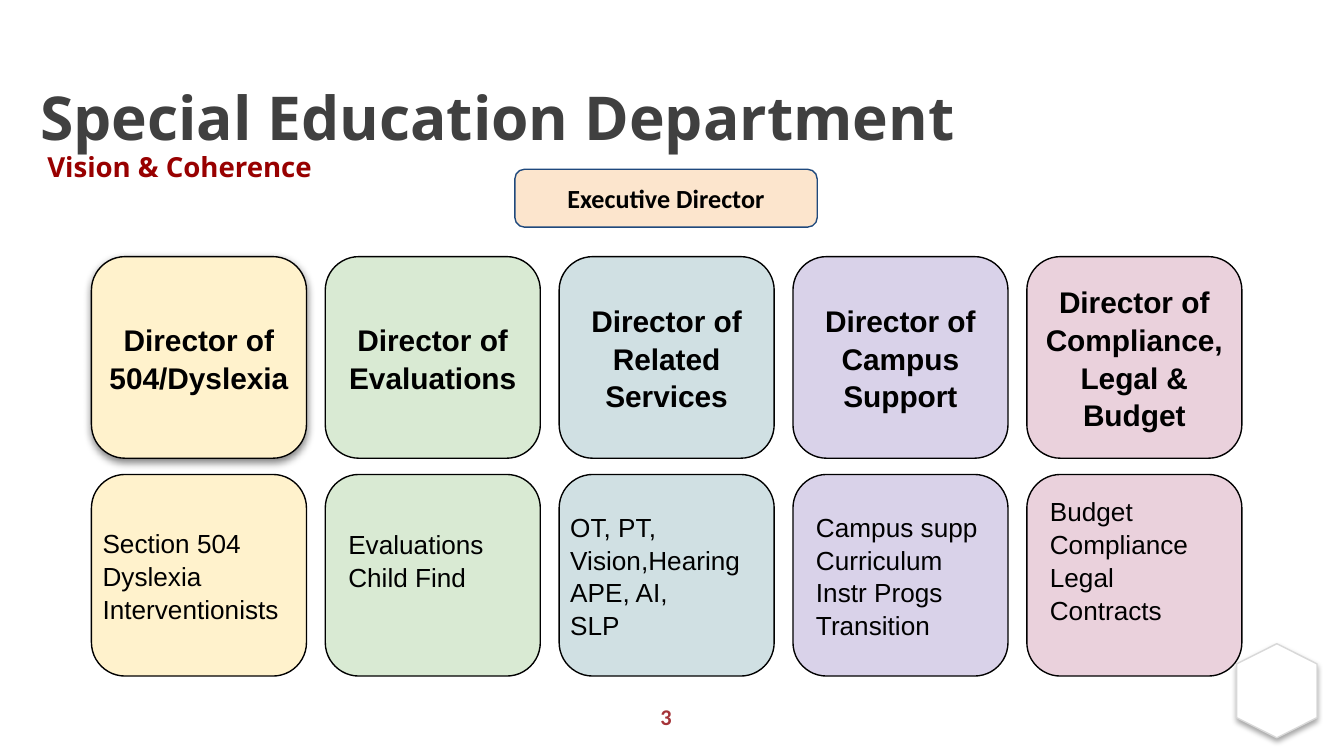
"""Build the Special Education Department organisation slide."""
from lxml import etree
from pptx import Presentation
from pptx.dml.color import RGBColor
from pptx.enum.shapes import MSO_SHAPE
from pptx.enum.text import MSO_ANCHOR, PP_ALIGN
from pptx.oxml.ns import qn
from pptx.util import Pt

BOX, HEXAGON = MSO_SHAPE.FLOWCHART_ALTERNATE_PROCESS, MSO_SHAPE.HEXAGON
MIDDLE = MSO_ANCHOR.MIDDLE
LEFT, CENTER = PP_ALIGN.LEFT, PP_ALIGN.CENTER

TITLE = "Special Education Department"
SUBTITLE = " Vision & Coherence"
HEAD = "Executive Director"
PAGE = "3"
NARROW, WIDE, RAISED = 0.72, 7.2, 24
DEPARTMENTS = [
    {"fill": "FFF2CC", "director": ["Director of 504/Dyslexia"], "director_side": NARROW,
     "areas": ["Section 504", "Dyslexia", "Interventionists"],
     "area_side": NARROW, "area_bottom": WIDE},
    {"fill": "D9EAD3", "director": ["Director of", "Evaluations"], "director_side": WIDE,
     "areas": ["Evaluations", "Child Find"],
     "area_side": WIDE, "area_bottom": RAISED},
    {"fill": "D0E0E3", "director": ["Director of", "Related Services"], "director_side": WIDE,
     "areas": ["OT, PT, Vision,Hearing", "APE, AI,", "SLP"],
     "area_side": NARROW, "area_bottom": WIDE},
    {"fill": "D9D2E9", "director": ["Director of", "Campus Support"], "director_side": WIDE,
     "areas": ["Campus supp", "Curriculum", "Instr Progs", "Transition"],
     "area_side": WIDE, "area_bottom": WIDE},
    {"fill": "EAD1DC", "director": ["Director of", "Compliance, Legal & Budget"],
     "director_side": NARROW,
     "areas": ["Budget", "Compliance", "Legal", "Contracts"],
     "area_side": WIDE, "area_bottom": RAISED},
]
THEME = {
    "title": "404040", "subtitle": "980000", "page": "A53338", "text": "000000",
    "line": "000000", "head_fill": "FCE5CD", "head_line": "1F497D",
    "hex_fill": "FFFFFF", "hex_line": "D8D8D8",
    "display": "Open Sans", "body": "Arial", "label": "Calibri",
    "title_size": 32.4, "subtitle_size": 14.8, "director_size": 16,
    "area_size": 14, "head_size": 14, "page_size": 12,
}
GRID_LEFT, COLUMN_STEP = 49, 125.28
DIRECTOR_TOP, AREA_TOP = 137.5, 254.2
BOX_WIDTH, BOX_HEIGHT = 115.2, 108


def rgb(name):
    return RGBColor.from_string(THEME.get(name, name))


def set_frame(tf, side=7.2, top=7.2, bottom=7.2):
    tf.word_wrap = True
    tf.vertical_anchor = MIDDLE
    tf.margin_left = tf.margin_right = Pt(side)
    tf.margin_top, tf.margin_bottom = Pt(top), Pt(bottom)


def write(tf, text, *, font, size, color="text", bold=True, align=CENTER, spacing=1.0):
    p = tf.paragraphs[0]
    if p.runs:
        p = tf.add_paragraph()
    p.alignment, p.line_spacing = align, spacing
    r = p.add_run()
    r.text = text
    r.font.name, r.font.size, r.font.bold = THEME[font], Pt(THEME[size]), bold
    r.font.color.rgb = rgb(color)


def add_text(s, x, y, w, h):
    tf = s.shapes.add_textbox(Pt(x), Pt(y), Pt(w), Pt(h)).text_frame
    set_frame(tf, top=3.6, bottom=3.6)
    return tf


def add_shape(s, kind, x, y, w, h, fill, line):
    sp = s.shapes.add_shape(kind, Pt(x), Pt(y), Pt(w), Pt(h))
    sp.shadow.inherit = False
    sp.fill.solid()
    sp.fill.fore_color.rgb = rgb(fill)
    sp.line.color.rgb = rgb(line)
    sp.line.width = Pt(0.75)
    return sp


def add_shadow(sp, blur, distance, opacity):
    effects = sp._element.spPr.find(qn("a:effectLst"))
    shadow = etree.SubElement(effects, qn("a:outerShdw"), blurRad=str(Pt(blur)),
                              dist=str(Pt(distance)), dir="5400000", rotWithShape="0")
    color = etree.SubElement(shadow, qn("a:srgbClr"), val="000000")
    etree.SubElement(color, qn("a:alpha"), val=str(opacity * 1000))


def add_department(s, column, department):
    x = GRID_LEFT + column * COLUMN_STEP
    area, director = [add_shape(s, BOX, x, y, BOX_WIDTH, BOX_HEIGHT, department["fill"], "line")
                      for y in (AREA_TOP, DIRECTOR_TOP)]
    set_frame(area.text_frame, department["area_side"], bottom=department["area_bottom"])
    for text in department["areas"]:
        write(area.text_frame, text, font="body", size="area_size",
              bold=False, align=LEFT, spacing=1.05)
    set_frame(director.text_frame, department["director_side"])
    for text in department["director"]:
        write(director.text_frame, text, font="body", size="director_size", spacing=1.05)
    return director


def main():
    prs = Presentation()
    prs.slide_width, prs.slide_height = Pt(720), Pt(405)
    s = prs.slides.add_slide(prs.slide_layouts[6])

    hexagon = add_shape(s, HEXAGON, 658.8, 348.5, 50.4, 43.2, "hex_fill", "hex_line")
    hexagon.adjustments[0], hexagon.adjustments[1] = 0.25, 1.15
    hexagon.rotation = 90
    add_shadow(hexagon, 3.1, 1.8, 35)

    tf = add_text(s, 14.4, 38.9, 699, 67.7)
    write(tf, TITLE, font="display", size="title_size", color="title", align=LEFT, spacing=0.9)
    write(tf, SUBTITLE, font="display", size="subtitle_size", color="subtitle",
          align=LEFT, spacing=0.9)
    write(add_text(s, 272.9, 373, 167.8, 21.6), PAGE,
          font="label", size="page_size", color="page")

    directors = [add_department(s, i, d) for i, d in enumerate(DEPARTMENTS)]
    add_shadow(directors[0], 4.5, 1.5, 50)

    head = add_shape(s, BOX, 275.8, 90.7, 162, 31, "head_fill", "head_line")
    set_frame(head.text_frame)
    write(head.text_frame, HEAD, font="label", size="head_size")

    prs.save("out.pptx")


if __name__ == "__main__":
    main()
